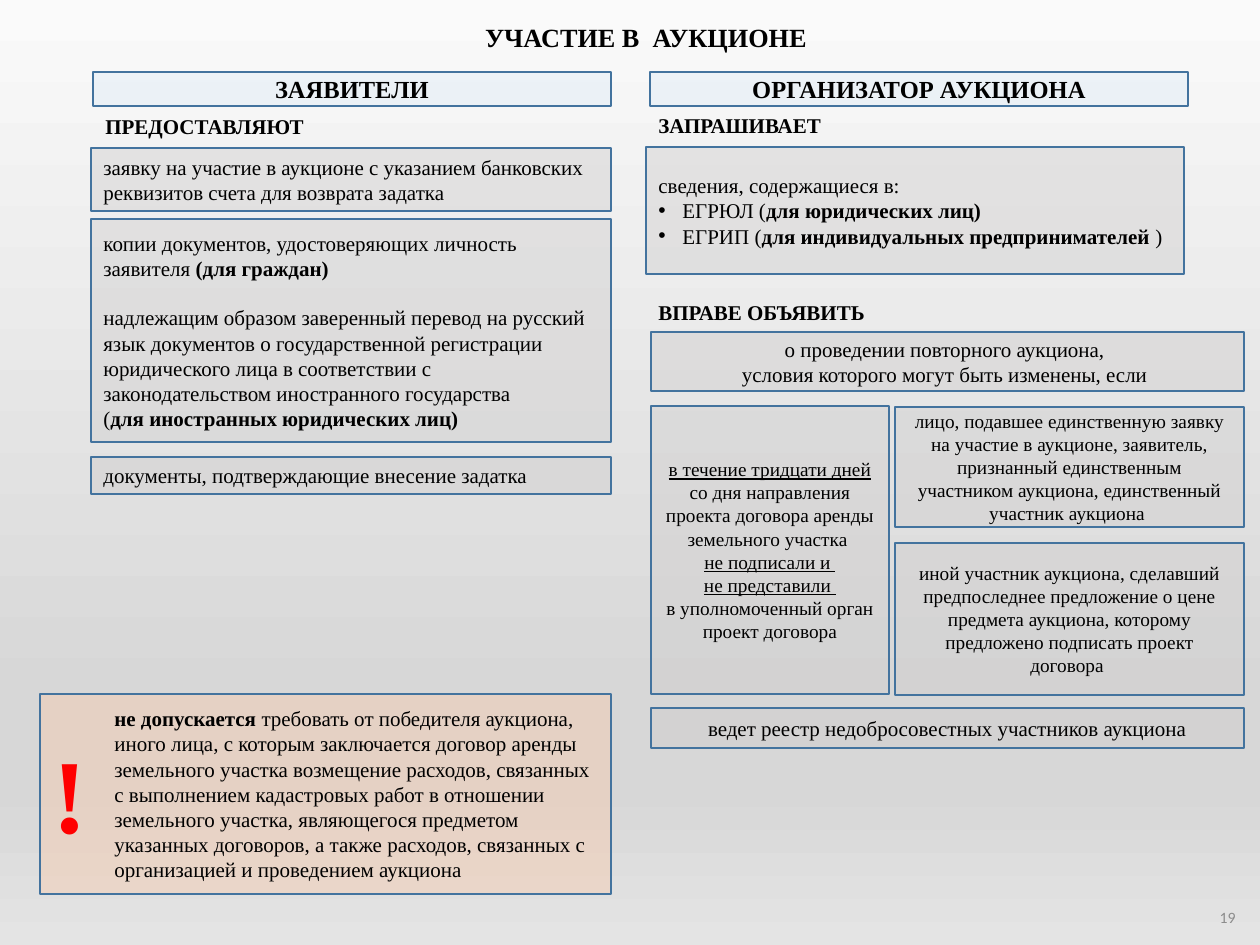
import pptx
import pptx.util
import pptx.dml.color
import pptx.enum.shapes
import pptx.enum.text
import pptx.oxml
import pptx.oxml.ns

Pt = pptx.util.Pt
RGB = pptx.dml.color.RGBColor
ALIGN = pptx.enum.text.PP_ALIGN
ANCHOR = pptx.enum.text.MSO_ANCHOR
qn = pptx.oxml.ns.qn
PX = 914400 / 126

BLACK = RGB(0x00, 0x00, 0x00)
RED = RGB(0xFF, 0x00, 0x00)
NUMBER = RGB(0x8C, 0x8C, 0x8C)
BORDER = RGB(0x43, 0x73, 0x9E)
BLUE = RGB(0xDE, 0xEB, 0xF7)
GRAY = RGB(0xD0, 0xCE, 0xCE)
PEACH = RGB(0xF8, 0xCB, 0xAD)
STOPS = [(0, "FAFAFA"), (74, "D7D7D7"), (83, "D7D7D7"), (100, "E4E4E4")]


def put_text(text, at, size=12, align=ALIGN.LEFT, color=BLACK, font="Times New Roman",
             bold=False, fill=None, anchor=ANCHOR.TOP, wrap=True, indent=0, gap=None):
    x, y, w, h = [round(v * PX) for v in at]
    if fill is None:
        sp = s.shapes.add_textbox(x, y, w, h)
    else:
        sp = s.shapes.add_shape(pptx.enum.shapes.MSO_SHAPE.RECTANGLE, x, y, w, h)
        sp.shadow.inherit = False
        sp.fill.solid()
        sp.fill.fore_color.rgb = fill
        clr = sp.fill._xPr.find(qn("a:solidFill"))[0]
        pptx.oxml.ns and clr.append(pptx.oxml.parse_xml(
            '<a:alpha xmlns:a="http://schemas.openxmlformats.org/drawingml/2006/main" val="45000"/>'))
        sp.line.color.rgb = BORDER
        sp.line.width = Pt(1)
        anchor = ANCHOR.MIDDLE
    tf = sp.text_frame
    tf.word_wrap = wrap
    tf.vertical_anchor = anchor
    for i, line in enumerate(text.split("\n")):
        p = tf.paragraphs[0] if i == 0 else tf.add_paragraph()
        p.alignment = align
        if gap == i:
            p.space_before = Pt(14)
        pPr = p._p.get_or_add_pPr()
        if indent:
            pPr.set("marL", str(round(indent * PX)))
        if line.startswith("•"):
            line = line[1:]
            pPr.set("marL", str(round(24 * PX)))
            pPr.set("indent", str(round(-24 * PX)))
            pPr.append(pptx.oxml.parse_xml(
                '<a:buFont xmlns:a="http://schemas.openxmlformats.org/drawingml/2006/main" typeface="Arial"/>'))
            pPr.append(pptx.oxml.parse_xml(
                '<a:buChar xmlns:a="http://schemas.openxmlformats.org/drawingml/2006/main" char="•"/>'))
        for j, strong in enumerate(line.split("*")):
            for k, under in enumerate(strong.split("_")):
                for n, part in enumerate(under.split("\v")):
                    if n:
                        p.add_line_break()
                    if part:
                        r = p.add_run()
                        r.text = part
                        r.font.name = font
                        r.font.size = Pt(size)
                        r.font.color.rgb = color
                        r.font.bold = bold or j % 2 == 1
                        r.font.underline = k % 2 == 1


prs = pptx.Presentation()
prs.slide_width = pptx.util.Inches(10)
prs.slide_height = pptx.util.Inches(7.5)
s = prs.slides.add_slide(prs.slide_layouts[6])

bg = s.background.fill
bg.gradient()
bg.gradient_angle = 270
gs = bg._fill._gradFill.find(qn("a:gsLst"))
for old in list(gs):
    gs.remove(old)
for pos, clr in STOPS:
    gs.append(pptx.oxml.parse_xml(
        '<a:gs xmlns:a="http://schemas.openxmlformats.org/drawingml/2006/main" '
        f'pos="{pos * 1000}"><a:srgbClr val="{clr}"/></a:gs>'))

put_text("19", (964, 892, 284, 50), size=9, align=ALIGN.RIGHT, color=NUMBER,
         font="Calibri", anchor=ANCHOR.MIDDLE)
put_text("УЧАСТИЕ В  АУКЦИОНЕ", (210, 15, 872, 44), size=15, align=ALIGN.CENTER, bold=True)

for text, at in [("ЗАЯВИТЕЛИ", (93, 72, 518, 34)),
                 ("ОРГАНИЗАТОР АУКЦИОНА", (650, 72, 538, 34))]:
    put_text(text, at, size=14, align=ALIGN.CENTER, bold=True, fill=BLUE)

for text, x, y in [("ПРЕДОСТАВЛЯЮТ", 93, 107), ("ЗАПРАШИВАЕТ", 646, 106),
                   ("ВПРАВЕ ОБЪЯВИТЬ", 646, 293)]:
    put_text(text, (x, y, 343, 38), bold=True)

for text, y, h in [
    ("заявку на участие в аукционе с указанием банковских реквизитов счета для возврата задатка",
     148, 63),
    ("копии документов, удостоверяющих личность заявителя *(для граждан)*\n"
     "надлежащим образом заверенный перевод на русский язык документов о государственной "
     "регистрации юридического лица в соответствии с законодательством иностранного государства\n"
     "(*для иностранных юридических лиц)*", 219, 223),
    ("документы, подтверждающие внесение задатка", 457, 37),
]:
    put_text(text, (91, y, 520, h), fill=GRAY, gap=1)

put_text("сведения, содержащиеся в:\n•ЕГРЮЛ (*для юридических лиц)*\n"
         "•ЕГРИП (*для индивидуальных предпринимателей *)", (646, 147, 538, 127), fill=GRAY)

for text, at, size in [
    ("о проведении повторного аукциона, \nусловия которого могут быть изменены, если ",
     (651, 332, 593, 59), 12),
    ("_в течение тридцати дней _со дня направления проекта договора аренды земельного участка \v"
     "_не подписали и \vне представили \v_в уполномоченный орган проект договора",
     (651, 406, 238, 288), 11),
    ("лицо, подавшее единственную заявку на участие в аукционе, заявитель, признанный "
     "единственным участником аукциона, единственный участник аукциона ",
     (895, 407, 349, 120), 11),
    ("иной участник аукциона, сделавший предпоследнее предложение о цене предмета аукциона, "
     "которому предложено подписать проект договора ", (895, 543, 349, 152), 11),
    ("ведет реестр недобросовестных участников аукциона", (651, 708, 593, 40), 12),
]:
    put_text(text, at, size=size, align=ALIGN.CENTER, fill=GRAY)

put_text("*не допускается *требовать от победителя аукциона, иного лица, с которым заключается "
         "договор аренды земельного участка возмещение расходов, связанных с выполнением "
         "кадастровых работ в отношении земельного участка, являющегося предметом указанных "
         "договоров, а также расходов, связанных с организацией и проведением аукциона",
         (40, 694, 571, 200), fill=PEACH, indent=62)
put_text("!", (40, 722, 60, 140), size=60, align=ALIGN.CENTER, color=RED, bold=True, wrap=False)

prs.save("out.pptx")
